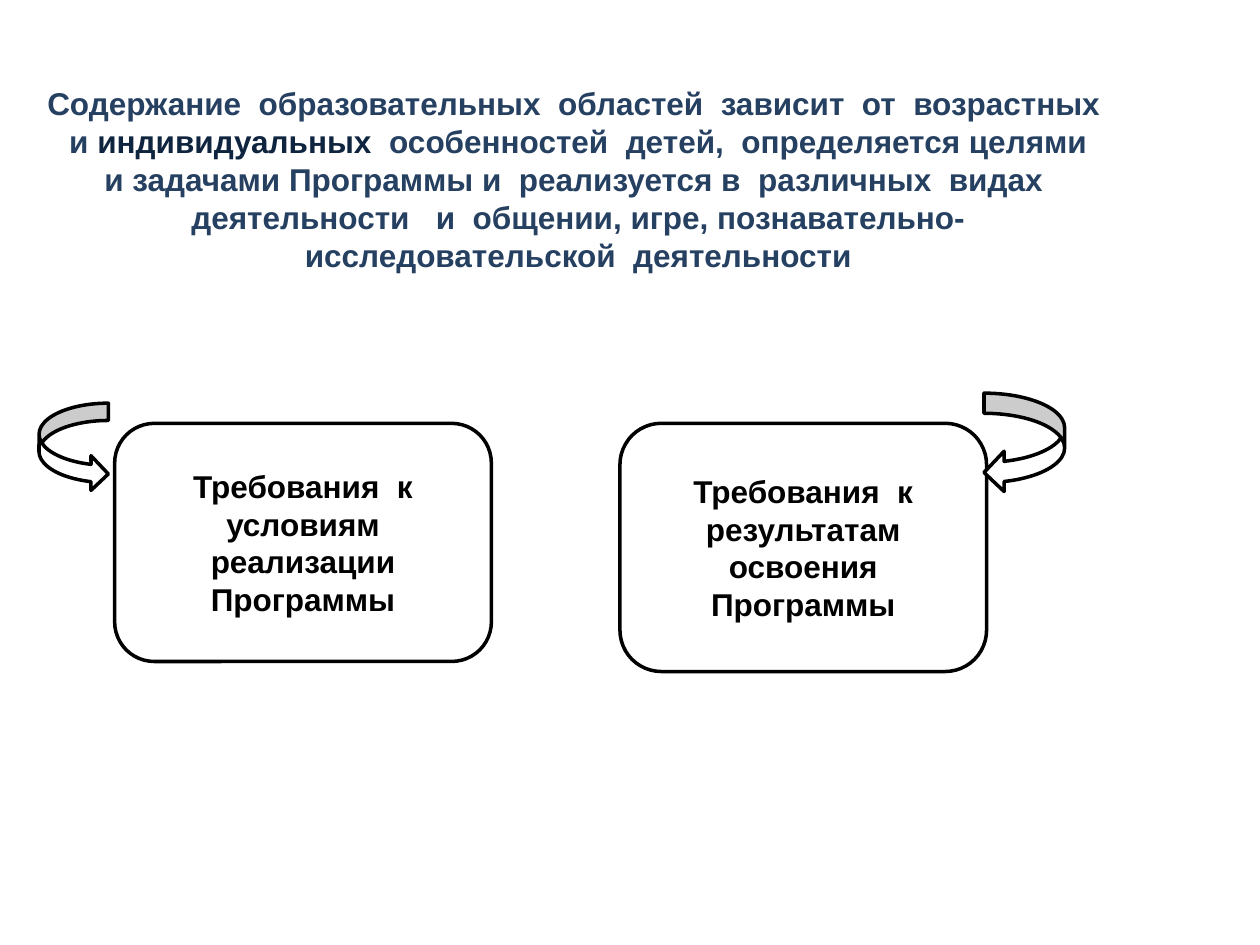
from pptx import Presentation
from pptx.dml.color import RGBColor
from pptx.enum import shapes, text
from pptx.util import Inches, Pt

NAVY = RGBColor(0x25, 0x40, 0x61)
DARK_NAVY = RGBColor(0x0F, 0x24, 0x3E)
BLACK = RGBColor(0, 0, 0)
WHITE = RGBColor(0xFF, 0xFF, 0xFF)

HEADING = [
    [("Содержание  образовательных  областей  зависит  от  возрастных", NAVY)],
    [(" и ", NAVY), ("индивидуальных", DARK_NAVY),
     ("  особенностей  детей,  определяется целями", NAVY)],
    [(" и задачами Программы и  реализуется в  различных  видах ", NAVY)],
    [(" деятельности   и  общении, игре, познавательно-", NAVY)],
    [(" исследовательской  деятельности", NAVY)],
]
REQUIREMENTS = [
    ((0.91, 3.36, 2.99, 1.89), ["Требования  к условиям реализации Программы"]),
    ((4.92, 3.36, 2.91, 1.97), ["Требования  к результатам освоения", "Программы"]),
]
ARROWS = [
    (shapes.MSO_SHAPE.CURVED_RIGHT_ARROW, (0.31, 3.2, 0.55, 0.7)),
    (shapes.MSO_SHAPE.CURVED_LEFT_ARROW, (7.81, 3.12, 0.64, 0.79)),
]


def write_text(shape, paragraphs, size=18, bold=True, font="Arial",
               anchor=text.MSO_ANCHOR.MIDDLE, wrap=True):
    """Fill a shape with centred paragraphs of (wording, colour) runs."""
    frame = shape.text_frame
    frame.word_wrap = wrap
    frame.vertical_anchor = anchor
    for index, runs in enumerate(paragraphs):
        paragraph = frame.paragraphs[0] if index == 0 else frame.add_paragraph()
        paragraph.alignment = text.PP_ALIGN.CENTER
        for wording, color in runs:
            run = paragraph.add_run()
            run.text = wording
            run.font.name = font
            run.font.size = Pt(size)
            run.font.bold = bold
            run.font.color.rgb = color


def add_heading(slide, box, paragraphs):
    """Place the title placeholder and write the heading in it."""
    title = slide.shapes.title
    title.left, title.top, title.width, title.height = map(Inches, box)
    write_text(title, paragraphs, anchor=text.MSO_ANCHOR.TOP, wrap=False)
    title.text_frame.auto_size = text.MSO_AUTO_SIZE.SHAPE_TO_FIT_TEXT


def add_outlined_shape(slide, kind, box):
    """Add a white preset shape with a black outline."""
    shape = slide.shapes.add_shape(kind, *map(Inches, box))
    shape.shadow.inherit = False
    shape.fill.solid()
    shape.fill.fore_color.rgb = WHITE
    shape.line.color.rgb = BLACK
    shape.line.width = Pt(2)
    return shape


def main():
    """Build the slide and save it."""
    presentation = Presentation()
    presentation.slide_width = Inches(10)
    presentation.slide_height = Inches(7.5)
    slide = presentation.slides.add_slide(presentation.slide_layouts[5])
    add_heading(slide, (0.23, 0.62, 8.65, 1.62), HEADING)
    for box, lines in REQUIREMENTS:
        shape = add_outlined_shape(
            slide, shapes.MSO_SHAPE.FLOWCHART_ALTERNATE_PROCESS, box)
        write_text(shape, [[(line, BLACK)] for line in lines])
    for kind, box in ARROWS:
        add_outlined_shape(slide, kind, box)
    presentation.save("out.pptx")


if __name__ == "__main__":
    main()
